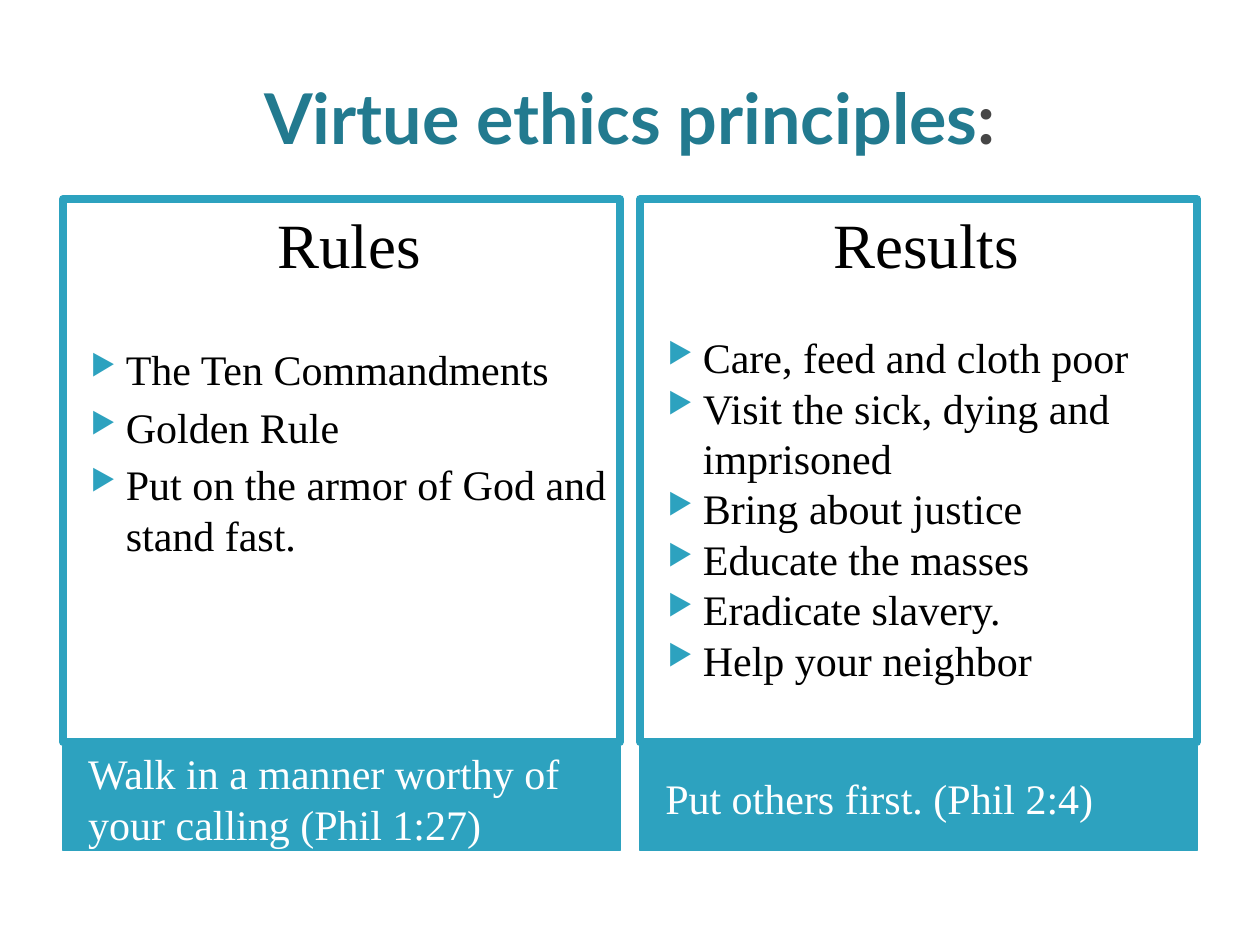
from lxml import etree
from pptx import Presentation
from pptx.dml.color import RGBColor
from pptx.enum.shapes import MSO_SHAPE
from pptx.enum.text import MSO_ANCHOR, PP_ALIGN
from pptx.oxml.ns import qn
from pptx.util import Inches, Pt

RECTANGLE = MSO_SHAPE.RECTANGLE
TOP, MIDDLE = MSO_ANCHOR.TOP, MSO_ANCHOR.MIDDLE
LEFT, CENTER = PP_ALIGN.LEFT, PP_ALIGN.CENTER

COLORS = {"teal": "2DA2BF", "title": "227A8F", "gray": "464646",
          "white": "FFFFFF", "black": "000000"}
MARGIN, COLUMN_WIDTH, COLUMN_STEP = 0.5, 4.42, 4.58
COLUMNS = [
    {"heading": "Rules", "gap": 36, "spacing": 4,
     "items": ["The Ten Commandments", "Golden Rule",
               "Put on the armor of God and stand fast."],
     "verse": "Walk in a manner worthy of your calling (Phil 1:27)"},
    {"heading": "Results", "gap": 29, "spacing": 0,
     "items": ["Care, feed and cloth poor", "Visit the sick, dying and imprisoned",
               "Bring about justice", "Educate the masses", "Eradicate slavery.",
               "Help your neighbor"],
     "verse": "Put others first. (Phil 2:4)"},
]


class SlideBuilder:
    """Draws the elements of one slide in a shared style."""

    title_font = "Lato"
    body_font = "Times New Roman"

    def __init__(self, slide):
        self.slide = slide

    def color(self, name):
        return RGBColor.from_string(COLORS[name])

    def set_font(self, font, size, color, name=body_font):
        font.name, font.size = name, Pt(size)
        font.color.rgb = self.color(color)

    def title(self, words, mark):
        box = self.slide.shapes.add_textbox(Inches(MARGIN), Inches(0.3), Inches(9), Inches(1.25))
        frame = box.text_frame
        frame.word_wrap, frame.vertical_anchor = True, MIDDLE
        para = frame.paragraphs[0]
        para.alignment = CENTER
        for text, color in ((words, "title"), (mark, "gray")):
            span = para.add_run()
            span.text = text
            self.set_font(span.font, 40, color, self.title_font)
            span.font.bold = True

    def rectangle(self, left, top, height, fill, line_width, anchor):
        box = self.slide.shapes.add_shape(
            RECTANGLE, Inches(left), Inches(top), Inches(COLUMN_WIDTH), Inches(height))
        box.shadow.inherit = False
        box.fill.solid()
        box.fill.fore_color.rgb = self.color(fill)
        box.line.color.rgb = self.color("teal")
        box.line.width = Pt(line_width)
        frame = box.text_frame
        frame.word_wrap, frame.vertical_anchor = True, anchor
        return frame

    def indent(self, para):
        properties = para._p.get_or_add_pPr()
        properties.set("marL", str(Inches(0.4)))
        properties.set("indent", str(Inches(-0.28)))
        return properties

    def bullet(self, para):
        properties = self.indent(para)
        color = etree.SubElement(properties, qn("a:buClr"))
        etree.SubElement(color, qn("a:srgbClr"), val=COLORS["teal"])
        etree.SubElement(properties, qn("a:buSzPct"), val="68000")
        etree.SubElement(properties, qn("a:buChar"), char="▶")

    def verse(self, left, text):
        frame = self.rectangle(left, 5.92, 0.83, "teal", 0.75, MIDDLE)
        frame.margin_left = Inches(0.2)
        para = frame.paragraphs[0]
        para.text, para.alignment = text, LEFT
        self.set_font(para.font, 24, "white")

    def panel(self, left, heading, items, gap, spacing):
        frame = self.rectangle(left, 1.58, 4.31, "white", 4.5, TOP)
        para = frame.paragraphs[0]
        para.text, para.alignment = heading, CENTER
        self.indent(para)
        self.set_font(para.font, 36, "black")
        for index, item in enumerate(items):
            para = frame.add_paragraph()
            para.text, para.alignment = item, LEFT
            para.space_before = Pt(spacing if index else gap)
            self.bullet(para)
            self.set_font(para.font, 24, "black")


def main():
    deck = Presentation()
    deck.slide_width, deck.slide_height = Inches(10), Inches(7.5)
    builder = SlideBuilder(deck.slides.add_slide(deck.slide_layouts[6]))
    builder.title("Virtue ethics principles", ":")
    lefts = [MARGIN + index * COLUMN_STEP for index in range(len(COLUMNS))]
    for left, column in zip(lefts, COLUMNS):
        builder.verse(left, column["verse"])
    for left, column in zip(lefts, COLUMNS):
        builder.panel(left, column["heading"], column["items"],
                      column["gap"], column["spacing"])
    deck.save("out.pptx")


if __name__ == "__main__":
    main()
